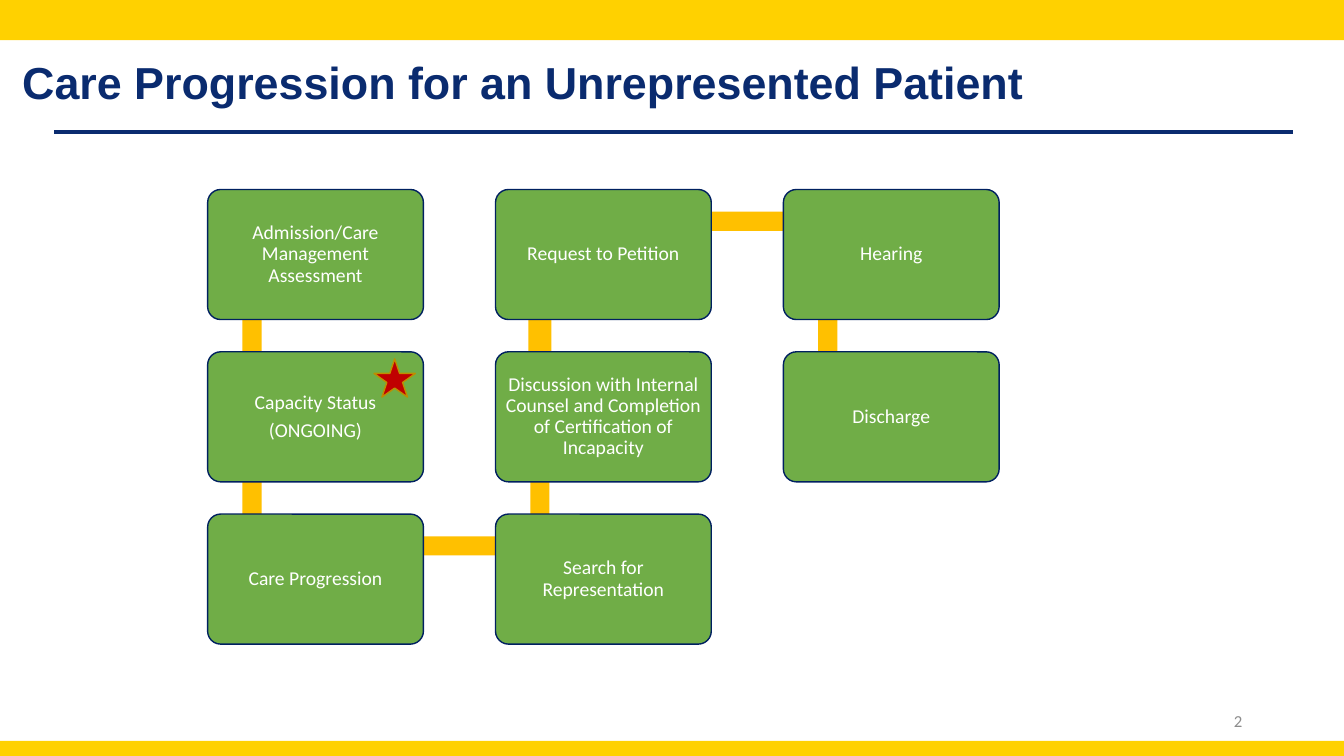
"""Build the slide showing care progression for an unrepresented patient."""
from pptx import Presentation
from pptx.dml.color import RGBColor
from pptx.enum.shapes import MSO_CONNECTOR, MSO_SHAPE
from pptx.enum.text import MSO_ANCHOR, PP_ALIGN
from pptx.oxml.ns import qn
from pptx.util import Inches, Pt
from lxml import etree

RECTANGLE = MSO_SHAPE.RECTANGLE
ROUNDED = MSO_SHAPE.ROUNDED_RECTANGLE
STAR = MSO_SHAPE.STAR_5_POINT
STRAIGHT = MSO_CONNECTOR.STRAIGHT
MIDDLE = MSO_ANCHOR.MIDDLE
LEFT, CENTER, RIGHT = PP_ALIGN.LEFT, PP_ALIGN.CENTER, PP_ALIGN.RIGHT

YELLOW = RGBColor(0xFF, 0xD1, 0x00)
AMBER = RGBColor(0xFF, 0xC0, 0x00)
NAVY = RGBColor(0x0A, 0x2B, 0x6F)
DARK_NAVY = RGBColor(0x00, 0x20, 0x60)
GREEN = RGBColor(0x70, 0xAD, 0x47)
RED = RGBColor(0xC0, 0x00, 0x00)
BRONZE = RGBColor(0xBD, 0x8E, 0x00)
GRAY = RGBColor(0x8C, 0x8C, 0x8C)
WHITE = RGBColor(0xFF, 0xFF, 0xFF)

STEP_WIDTH, STEP_HEIGHT = 2.14, 1.29
FIRST_LEFT, FIRST_TOP = 2.06, 1.88
COLUMN_PITCH, ROW_PITCH = 2.855, 1.61
JOINT_X, JOINT_Y = 0.44, 0.315
LINK_WIDTH, WIDE_LINK_WIDTH = 0.19, 0.23

STEPS = [
    (0, 0, "Admission/Care Management Assessment"),
    (0, 1, "Capacity Status\n(ONGOING)"),
    (0, 2, "Care Progression"),
    (1, 2, "Search for Representation"),
    (1, 1, "Discussion with Internal Counsel and Completion "
           "of Certification of Incapacity"),
    (1, 0, "Request to Petition"),
    (2, 0, "Hearing"),
    (2, 1, "Discharge"),
]
WIDE_LINK_START = (1, 1)


def add_filled(kind, left, top, width, height, fill, outline=None):
    shape = slide.shapes.add_shape(
        kind, Inches(left), Inches(top), Inches(width), Inches(height))
    shape.shadow.inherit = False
    shape.fill.solid()
    shape.fill.fore_color.rgb = fill
    if outline is None:
        shape.line.fill.background()
    else:
        shape.line.color.rgb = outline
        shape.line.width = Pt(1)
    return shape


def style_paragraph(paragraph, font_name, size, color, alignment):
    paragraph.alignment = alignment
    paragraph.font.name = font_name
    paragraph.font.size = Pt(size)
    paragraph.font.color.rgb = color


prs = Presentation()
prs.slide_width, prs.slide_height = Inches(13.33), Inches(7.5)
slide = prs.slides.add_slide(prs.slide_layouts[5])

add_filled(RECTANGLE, 0, 0, 13.33, 0.4, YELLOW)
add_filled(RECTANGLE, 0, 7.35, 13.33, 0.15, YELLOW)

title_rule = slide.shapes.add_connector(
    STRAIGHT, Inches(0.54), Inches(1.31), Inches(12.82), Inches(1.31))
title_rule.line.color.rgb = NAVY
title_rule.line.width = Pt(2.25)
etree.SubElement(title_rule.element.spPr, qn("a:effectLst"))

title = slide.shapes.title
title.left, title.top = Inches(0), Inches(0.4)
title.width, title.height = Inches(12.42), Inches(0.88)
title.text_frame.text = "Care Progression for an Unrepresented Patient"
title.text_frame.vertical_anchor = MIDDLE
title.text_frame.margin_left = Inches(0.22)
heading = title.text_frame.paragraphs[0]
style_paragraph(heading, "Arial", 32, NAVY, LEFT)
heading.font.bold = True
heading.line_spacing = 0.9

page_number = slide.shapes.add_textbox(
    Inches(9.42), Inches(6.95), Inches(3), Inches(0.4)).text_frame
page_number.word_wrap = True
page_number.vertical_anchor = MIDDLE
page_number.text = "2"
style_paragraph(page_number.paragraphs[0], "Calibri", 12, GRAY, RIGHT)

for (column, row, _), (next_column, next_row, _) in zip(STEPS, STEPS[1:]):
    joint_x = FIRST_LEFT + min(column, next_column) * COLUMN_PITCH + JOINT_X
    joint_y = FIRST_TOP + min(row, next_row) * ROW_PITCH + JOINT_Y
    if row == next_row:
        add_filled(RECTANGLE, joint_x, joint_y - LINK_WIDTH / 2,
                   COLUMN_PITCH, LINK_WIDTH, AMBER)
    else:
        thickness = WIDE_LINK_WIDTH if (column, row) == WIDE_LINK_START else LINK_WIDTH
        add_filled(RECTANGLE, joint_x - thickness / 2, joint_y,
                   thickness, ROW_PITCH, AMBER)

for column, row, label in STEPS:
    step = add_filled(ROUNDED, FIRST_LEFT + column * COLUMN_PITCH,
                      FIRST_TOP + row * ROW_PITCH,
                      STEP_WIDTH, STEP_HEIGHT, GREEN, DARK_NAVY)
    step.adjustments[0] = 0.1
    frame = step.text_frame
    frame.word_wrap = True
    frame.vertical_anchor = MIDDLE
    frame.margin_left = frame.margin_right = Inches(0.06)
    frame.margin_top = frame.margin_bottom = Inches(0.06)
    frame.text = label
    for paragraph in frame.paragraphs:
        style_paragraph(paragraph, "Calibri", 14, WHITE, CENTER)
        paragraph.line_spacing = 0.9
        paragraph.space_after = Pt(5)

add_filled(STAR, 3.71, 3.56, 0.41, 0.38, RED, BRONZE)

prs.save("out.pptx")
